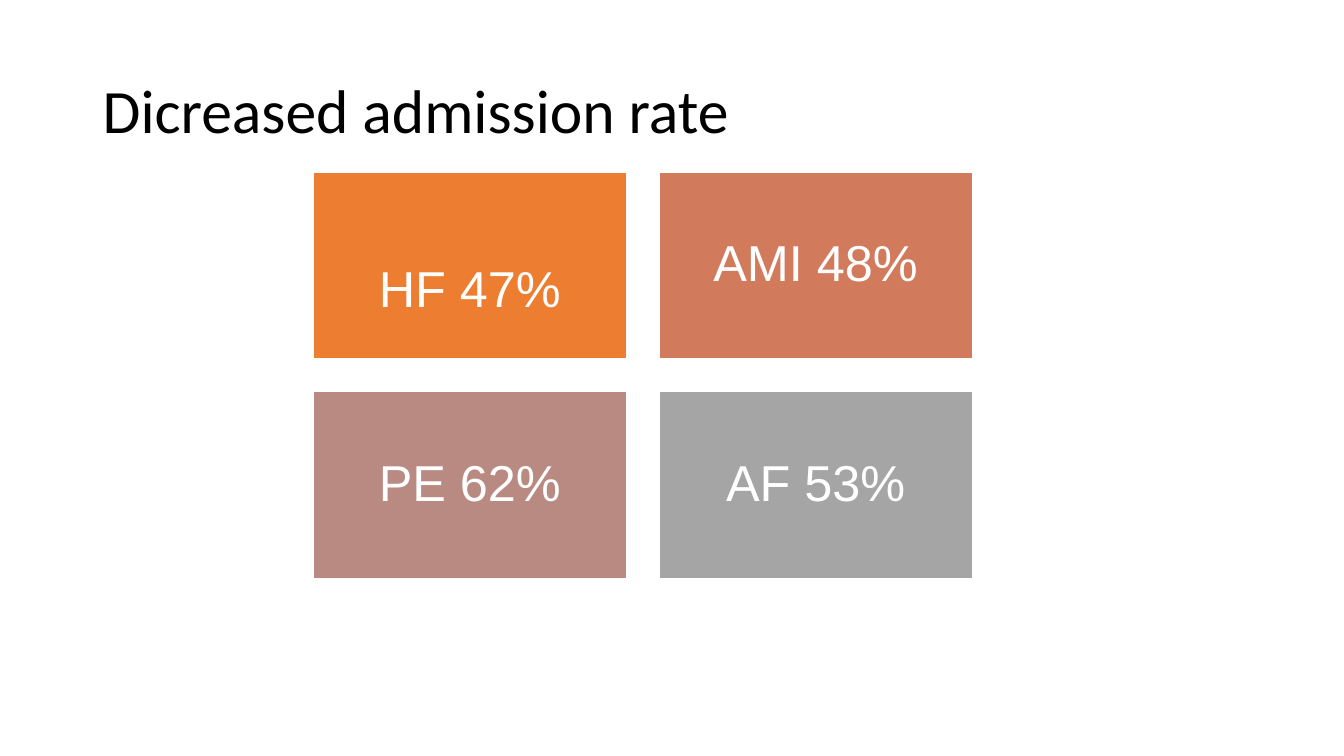
"""Build a slide of decreased admission rates by diagnosis."""
from dataclasses import dataclass

from pptx import Presentation
from pptx.dml.color import RGBColor
from pptx.enum.shapes import MSO_SHAPE
from pptx.enum.text import MSO_ANCHOR, PP_ALIGN
from pptx.slide import Slide
from pptx.util import Inches, Pt

BLACK = RGBColor(0x00, 0x00, 0x00)
WHITE = RGBColor(0xFF, 0xFF, 0xFF)
ORANGE = RGBColor(0xED, 0x7D, 0x31)
TERRACOTTA = RGBColor(0xD1, 0x7B, 0x5C)
DUSTY_ROSE = RGBColor(0xB9, 0x8A, 0x82)
GRAY = RGBColor(0xA5, 0xA5, 0xA5)

GRID_LEFT, GRID_TOP = 3.1, 1.7
TILE_WIDTH, TILE_HEIGHT = 3.12, 1.87
GAP = 0.31
COLUMNS = 2
TILE_MARGIN = 0.15


@dataclass(frozen=True)
class RateTile:
    label: str
    color: RGBColor
    margin_top: float = TILE_MARGIN


TILES = (
    RateTile("HF 47%", ORANGE, margin_top=0.65),
    RateTile("AMI 48%", TERRACOTTA),
    RateTile("PE 62%", DUSTY_ROSE),
    RateTile("AF 53%", GRAY),
)


def add_title(slide: Slide, text: str) -> None:
    box = slide.shapes.add_textbox(Inches(0.92), Inches(0.4), Inches(11.5), Inches(1.45))
    frame = box.text_frame
    frame.word_wrap = True
    frame.vertical_anchor = MSO_ANCHOR.MIDDLE
    paragraph = frame.paragraphs[0]
    paragraph.text = text
    paragraph.line_spacing = 0.9
    paragraph.font.name = "Calibri"
    paragraph.font.size = Pt(44)
    paragraph.font.color.rgb = BLACK


def add_tile(slide: Slide, tile: RateTile, index: int) -> None:
    row, column = divmod(index, COLUMNS)
    shape = slide.shapes.add_shape(
        MSO_SHAPE.RECTANGLE,
        Inches(GRID_LEFT + column * (TILE_WIDTH + GAP)),
        Inches(GRID_TOP + row * (TILE_HEIGHT + GAP)),
        Inches(TILE_WIDTH),
        Inches(TILE_HEIGHT),
    )
    shape.shadow.inherit = False
    shape.fill.solid()
    shape.fill.fore_color.rgb = tile.color
    shape.line.color.rgb = WHITE
    shape.line.width = Pt(2)

    frame = shape.text_frame
    frame.word_wrap = True
    frame.vertical_anchor = MSO_ANCHOR.MIDDLE
    frame.margin_left = frame.margin_right = frame.margin_bottom = Inches(TILE_MARGIN)
    frame.margin_top = Inches(tile.margin_top)
    paragraph = frame.paragraphs[0]
    paragraph.text = tile.label
    paragraph.alignment = PP_ALIGN.CENTER
    paragraph.line_spacing = 0.9
    paragraph.font.name = "Arial"
    paragraph.font.size = Pt(36)
    paragraph.font.color.rgb = WHITE


def main() -> None:
    presentation = Presentation()
    presentation.slide_width = Inches(13.33)
    presentation.slide_height = Inches(7.5)
    slide = presentation.slides.add_slide(presentation.slide_layouts[6])
    add_title(slide, "Dicreased admission rate")
    for index, tile in enumerate(TILES):
        add_tile(slide, tile, index)
    presentation.save("out.pptx")


if __name__ == "__main__":
    main()
